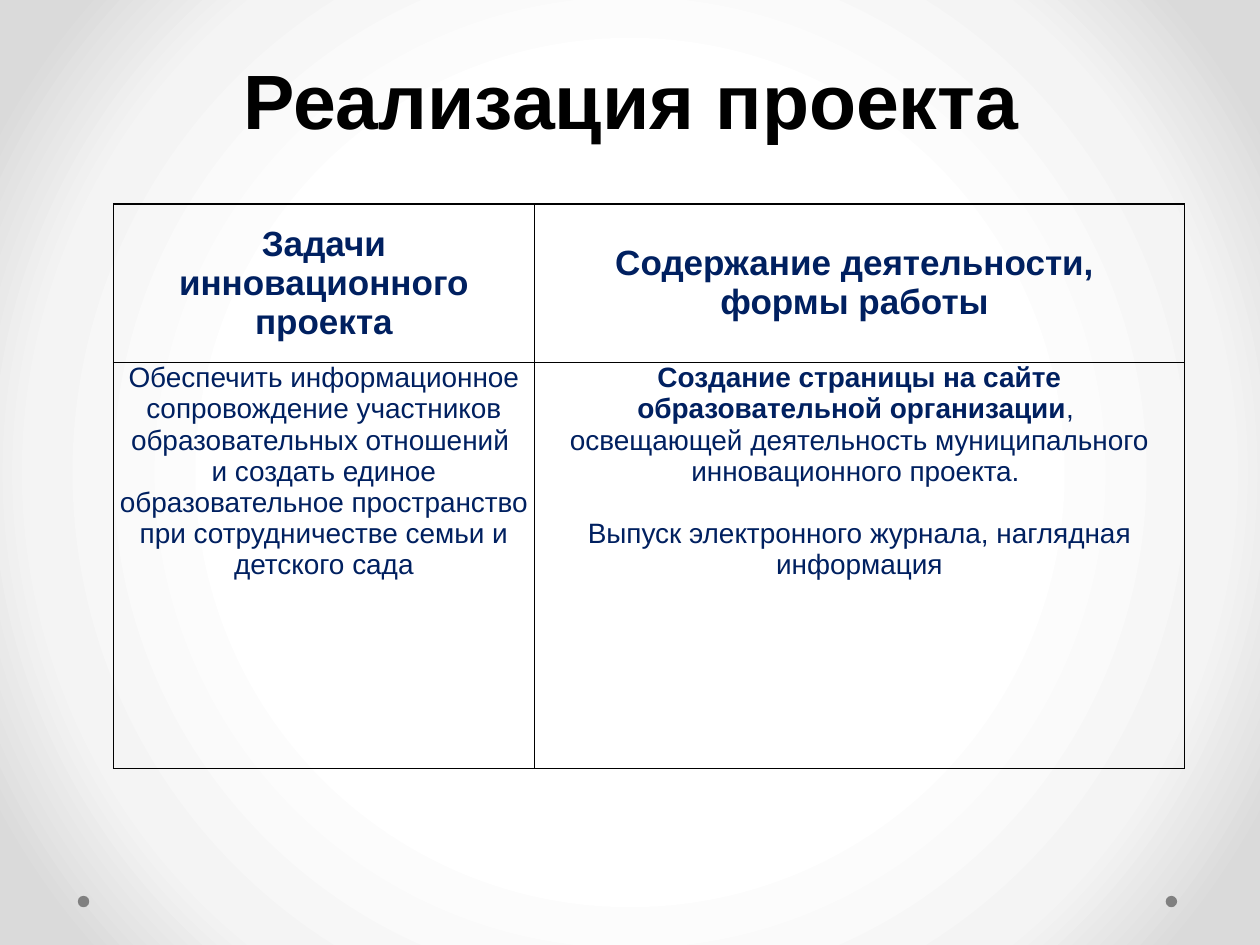
from lxml import etree
from pptx import Presentation
from pptx.dml.color import RGBColor
from pptx.enum.shapes import MSO_SHAPE
from pptx.enum.text import MSO_ANCHOR, MSO_AUTO_SIZE, PP_ALIGN
from pptx.oxml.ns import qn
from pptx.util import Cm, Pt

OVAL = MSO_SHAPE.OVAL
TOP, MIDDLE, BOTTOM = MSO_ANCHOR.TOP, MSO_ANCHOR.MIDDLE, MSO_ANCHOR.BOTTOM
CENTER = PP_ALIGN.CENTER
FIXED = MSO_AUTO_SIZE.NONE

BLACK = RGBColor(0x00, 0x00, 0x00)
NAVY = RGBColor(0x00, 0x20, 0x60)
GRAY = RGBColor(0x80, 0x80, 0x80)
GLOW = (
    (50, RGBColor(0xFF, 0xFF, 0xFF)),
    (76, RGBColor(0xF4, 0xF4, 0xF4)),
    (92, RGBColor(0xDA, 0xDA, 0xDA)),
)

TITLE_FONT = {"name": "Arial", "size": Pt(44), "bold": True}
HEADER_FONT = {"name": "Arial", "size": Pt(20), "bold": True}
BODY_FONT = {"name": "Arial", "size": Pt(16), "bold": False}
STRONG_FONT = BODY_FONT | {"bold": True}

PARA_GAP = Pt(18)
COLUMN_WIDTHS = (Cm(8.48), Cm(13.11))
HEADER_ROW = (
    [[("Задачи инновационного проекта", HEADER_FONT)]],
    [
        [("Содержание деятельности, ", HEADER_FONT)],
        [("формы работы ", HEADER_FONT)],
    ],
)
BODY_ROW = (
    [
        [("Обеспечить информационное сопровождение участников образовательных отношений ", BODY_FONT)],
        [("и создать единое образовательное пространство при сотрудничестве семьи и детского сада", BODY_FONT)],
    ],
    [
        [("Создание страницы на сайте образовательной организации", STRONG_FONT), (", ", BODY_FONT)],
        [("освещающей деятельность муниципального инновационного проекта. ", BODY_FONT)],
        [("Выпуск электронного журнала, наглядная информация", BODY_FONT)],
    ],
)
ROWS = ((Cm(3.2), MIDDLE, HEADER_ROW), (Cm(8.18), TOP, BODY_ROW))


def set_values(target, values):
    """Set each named attribute of the target."""
    for name, value in values.items():
        setattr(target, name, value)


def add_span(para, text, font, color):
    """Add one formatted run to a paragraph."""
    span = para.add_run()
    span.text = text
    set_values(span.font, font)
    span.font.color.rgb = color


def paint_background(page):
    """Give the page a circular gradient that darkens outwards."""
    page.background.fill.gradient()
    gradient = page.element.find(".//" + qn("a:gradFill"))
    for child in list(gradient):
        gradient.remove(child)
    stops = etree.SubElement(gradient, qn("a:gsLst"))
    for percent, color in GLOW:
        stop = etree.SubElement(stops, qn("a:gs"), pos=str(percent * 1000))
        etree.SubElement(stop, qn("a:srgbClr"), val=str(color))
    circle = etree.SubElement(gradient, qn("a:path"), path="circle")
    center = {side: "50000" for side in "ltrb"}
    etree.SubElement(circle, qn("a:fillToRect"), center)


def add_dots(page, left, top, width, size):
    """Place a small dot at each end of the given strip."""
    for dot_left in (left, left + width - size):
        dot = page.shapes.add_shape(OVAL, dot_left, top, size, size)
        dot.shadow.inherit = False
        dot.fill.solid()
        dot.fill.fore_color.rgb = GRAY
        dot.line.fill.background()


def place_title(page, left, top, width, height):
    """Move and format the title placeholder."""
    title = page.shapes.title
    set_values(title, {"left": left, "top": top, "width": width, "height": height})
    frame = title.text_frame
    set_values(frame, {"vertical_anchor": BOTTOM, "word_wrap": True, "auto_size": FIXED})
    para = frame.paragraphs[0]
    set_values(para, {"alignment": CENTER, "line_spacing": Pt(58)})
    add_span(para, "Реализация проекта", TITLE_FONT, BLACK)


def add_borders(cell):
    """Draw a thin black line on every side of a cell."""
    properties = cell._tc.get_or_add_tcPr()
    for position, side in enumerate(("lnL", "lnR", "lnT", "lnB")):
        line = etree.Element(qn("a:" + side), w=str(Pt(1)))
        fill = etree.SubElement(line, qn("a:solidFill"))
        etree.SubElement(fill, qn("a:srgbClr"), val=str(BLACK))
        properties.insert(position, line)


def fill_cell(cell, paragraphs, anchor):
    """Write the paragraphs into a transparent bordered cell."""
    set_values(cell, {
        "margin_left": Cm(0.1), "margin_right": Cm(0.1),
        "margin_top": 0, "margin_bottom": 0, "vertical_anchor": anchor,
    })
    cell.fill.background()
    add_borders(cell)
    frame = cell.text_frame
    for index, spans in enumerate(paragraphs):
        para = frame.add_paragraph() if index else frame.paragraphs[0]
        para.alignment = CENTER
        if index == 2:
            para.space_before = PARA_GAP
        for text, font in spans:
            add_span(para, text, font, NAVY)


def add_task_table(page, left, top):
    """Add the table of project tasks and activities."""
    width = sum(COLUMN_WIDTHS)
    height = sum(row_height for row_height, _, _ in ROWS)
    table = page.shapes.add_table(len(ROWS), len(COLUMN_WIDTHS), left, top, width, height).table
    set_values(table, {"first_row": False, "horz_banding": False})
    for column, column_width in zip(table.columns, COLUMN_WIDTHS):
        column.width = column_width
    for row, (row_height, anchor, contents) in zip(table.rows, ROWS):
        row.height = row_height
        for cell, paragraphs in zip(row.cells, contents):
            fill_cell(cell, paragraphs, anchor)


def main():
    """Build and save the deck."""
    deck = Presentation()
    set_values(deck, {"slide_width": Cm(25.4), "slide_height": Cm(19.05)})
    page = deck.slides.add_slide(deck.slide_layouts[5])
    paint_background(page)
    add_dots(page, Cm(1.57), Cm(18.06), Cm(22.16), Cm(0.23))
    place_title(page, Cm(1.3), Cm(0.53), Cm(22.86), Cm(2.51))
    add_task_table(page, Cm(2.29), Cm(4.11))
    deck.save("out.pptx")


if __name__ == "__main__":
    main()
